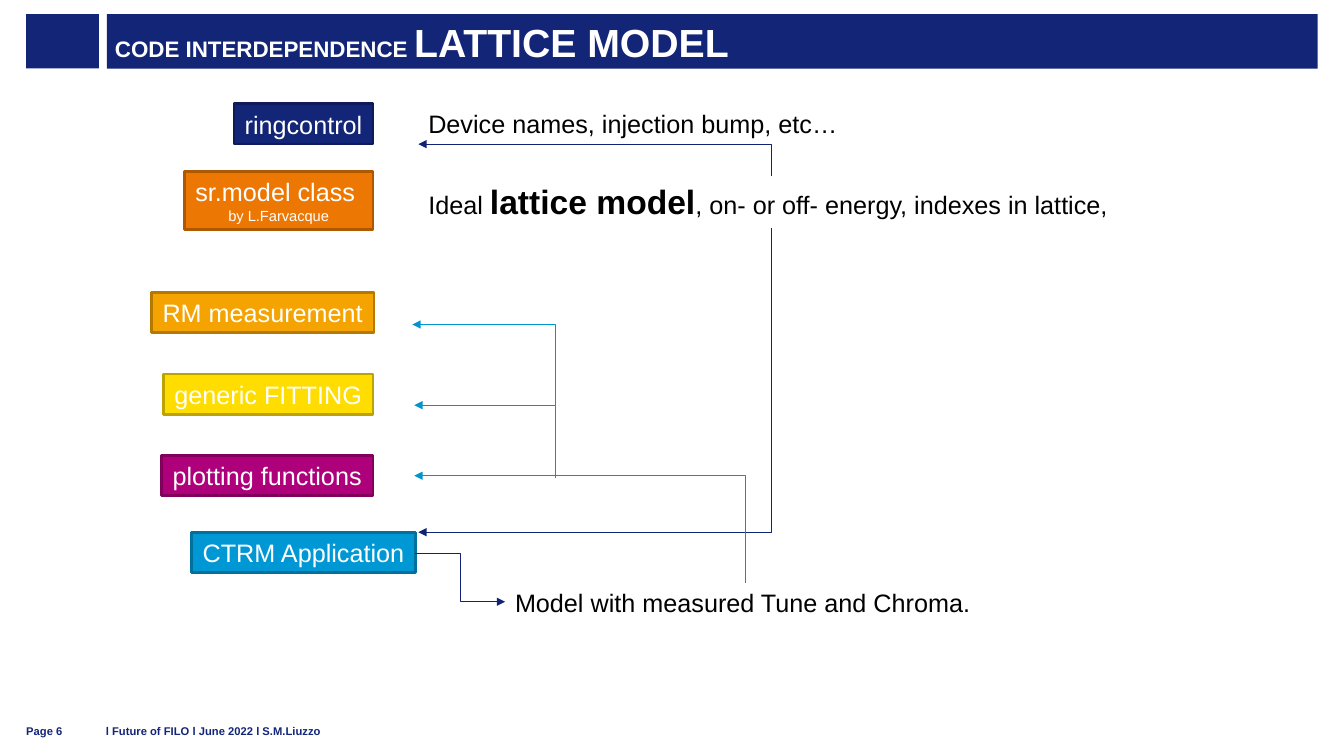
from pptx import Presentation
from pptx.dml.color import RGBColor
from pptx.enum.shapes import MSO_CONNECTOR as CONN, MSO_SHAPE as SHAPE
from pptx.enum.text import MSO_ANCHOR as ANCHOR, MSO_AUTO_SIZE as FIT, PP_ALIGN as ALIGN
from pptx.oxml.ns import qn
from pptx.util import Inches, Pt
from lxml import etree

NAVY, WHITE, BLACK = "132577", "FFFFFF", "000000"
ARROW_NAVY, ARROW_BLUE = "102377", "0095CF"

# A text is a list of paragraphs, each a list of (words, size, bold)
TITLE = [[("CODE INTERDEPENDENCE ", 16, True), ("LATTICE MODEL", 28, True)]]
FOOTER = [  # left, width, words
    (0.26, 0.6, "Page 6"),
    (1.05, 8.92, "l Future of FILO l June 2022 l S.M.Liuzzo"),
]
MODULES = [  # left, top, width, height, fill, border, text
    (1.9, 5.28, 2.22, 0.4, "0098D4", "00709D", [[("CTRM Application", 18, False)]]),
    (1.62, 3.71, 2.08, 0.4, "FFDD00", "BDA300", [[("generic FITTING", 18, False)]]),
    (1.5, 2.9, 2.21, 0.4, "F4A300", "B57900", [[("RM measurement", 18, False)]]),
    (2.32, 1.03, 1.38, 0.4, NAVY, "0E1B58", [[("ringcontrol", 18, False)]]),
    (1.6, 4.52, 2.1, 0.4, "AF007C", "81005C", [[("plotting functions", 18, False)]]),
    (1.83, 1.7, 1.87, 0.58, "ED7703", "AF5802",
     [[("sr.model class ", 18, False)], [("by L.Farvacque", 10.5, False)]]),
]
NOTES = [  # left, top, width, height, text
    (4.15, 1.03, 4.37, 0.4, [[("Device names, injection bump, etc…", 18, False)]]),
    (4.15, 1.75, 7, 0.5, [[("Ideal ", 18, False), ("lattice model", 24, True),
                           (", on- or off- energy, indexes in lattice,", 18, False)]]),
    (5.01, 5.78, 4.76, 0.4, [[("Model with measured Tune and Chroma.", 18, False)]]),
]
ARROWS = [  # start, end, share of the width where the line bends, colour
    ((7.65, 2.26), (4.15, 5.28), 0, ARROW_NAVY),
    ((7.65, 1.75), (4.15, 1.43), 0, ARROW_NAVY),
    ((4.12, 5.49), (5.01, 5.97), 0.5, ARROW_NAVY),
    ((7.39, 5.78), (4.11, 4.72), 0, ARROW_BLUE),
    ((5.51, 4.74), (4.11, 4.02), 0, ARROW_BLUE),
    ((5.51, 4.02), (4.09, 3.22), 0, ARROW_BLUE),
]


def rgb(code):
    return RGBColor.from_string(code)


def write(tf, paragraphs, color, align=ALIGN.LEFT):
    for i, runs in enumerate(paragraphs):
        p = tf.paragraphs[0] if i == 0 else tf.add_paragraph()
        p.alignment = align
        for words, size, bold in runs:
            r = p.add_run()
            r.text = words
            r.font.name = "Arial"
            r.font.size = Pt(size)
            r.font.bold = bold
            r.font.color.rgb = rgb(color)


def set_margins(tf, side):
    tf.margin_left = tf.margin_right = Inches(side)
    tf.margin_top = tf.margin_bottom = 0


def add_box(left, top, width, height, fill, border=None):
    sp = slide.shapes.add_shape(SHAPE.RECTANGLE, *map(Inches, (left, top, width, height)))
    sp.shadow.inherit = False
    sp.fill.solid()
    sp.fill.fore_color.rgb = rgb(fill)
    if border:
        sp.line.color.rgb = rgb(border)
        sp.line.width = Pt(2)
    else:
        sp.line.fill.background()
    return sp


def add_text(left, top, width, height):
    return slide.shapes.add_textbox(*map(Inches, (left, top, width, height))).text_frame


def add_arrow(start, end, bend, color):
    cx = slide.shapes.add_connector(CONN.ELBOW, *map(Inches, start + end))
    cx.line.color.rgb = rgb(color)
    cx.line.width = Pt(0.75)
    props = cx._element.spPr
    guides = props.find(qn("a:prstGeom")).get_or_add_avLst()
    etree.SubElement(guides, qn("a:gd"), name="adj1", fmla=f"val {int(bend * 100000)}")
    etree.SubElement(props.find(qn("a:ln")), qn("a:tailEnd"), type="triangle")
    etree.SubElement(props, qn("a:effectLst"))


prs = Presentation()
prs.slide_width, prs.slide_height = Inches(13.33), Inches(7.5)
slide = prs.slides.add_slide(prs.slide_layouts[5])

# Title bar
add_box(0.26, 0.14, 0.72, 0.54, NAVY)
title = slide.shapes.title
title.left, title.top, title.width, title.height = map(Inches, (1.06, 0.14, 12.01, 0.54))
title.fill.solid()
title.fill.fore_color.rgb = rgb(NAVY)
tf = title.text_frame
tf.auto_size = FIT.NONE
tf.vertical_anchor = ANCHOR.MIDDLE
set_margins(tf, 0.08)
write(tf, TITLE, WHITE)

# Footer
for left, width, words in FOOTER:
    tf = add_text(left, 7.09, width, 0.23)
    tf.word_wrap = True
    tf.vertical_anchor = ANCHOR.BOTTOM
    set_margins(tf, 0)
    write(tf, [[(words, 8, True)]], NAVY)

# Code modules
for *place, fill, border, text in MODULES:
    tf = add_box(*place, fill, border).text_frame
    tf.word_wrap = False
    tf.auto_size = FIT.SHAPE_TO_FIT_TEXT
    write(tf, text, WHITE, ALIGN.CENTER)

# What each module provides
for *place, text in NOTES:
    tf = add_text(*place)
    tf.word_wrap = False
    tf.auto_size = FIT.SHAPE_TO_FIT_TEXT
    write(tf, text, BLACK)

# Dependencies
for arrow in ARROWS:
    add_arrow(*arrow)

prs.save("out.pptx")
